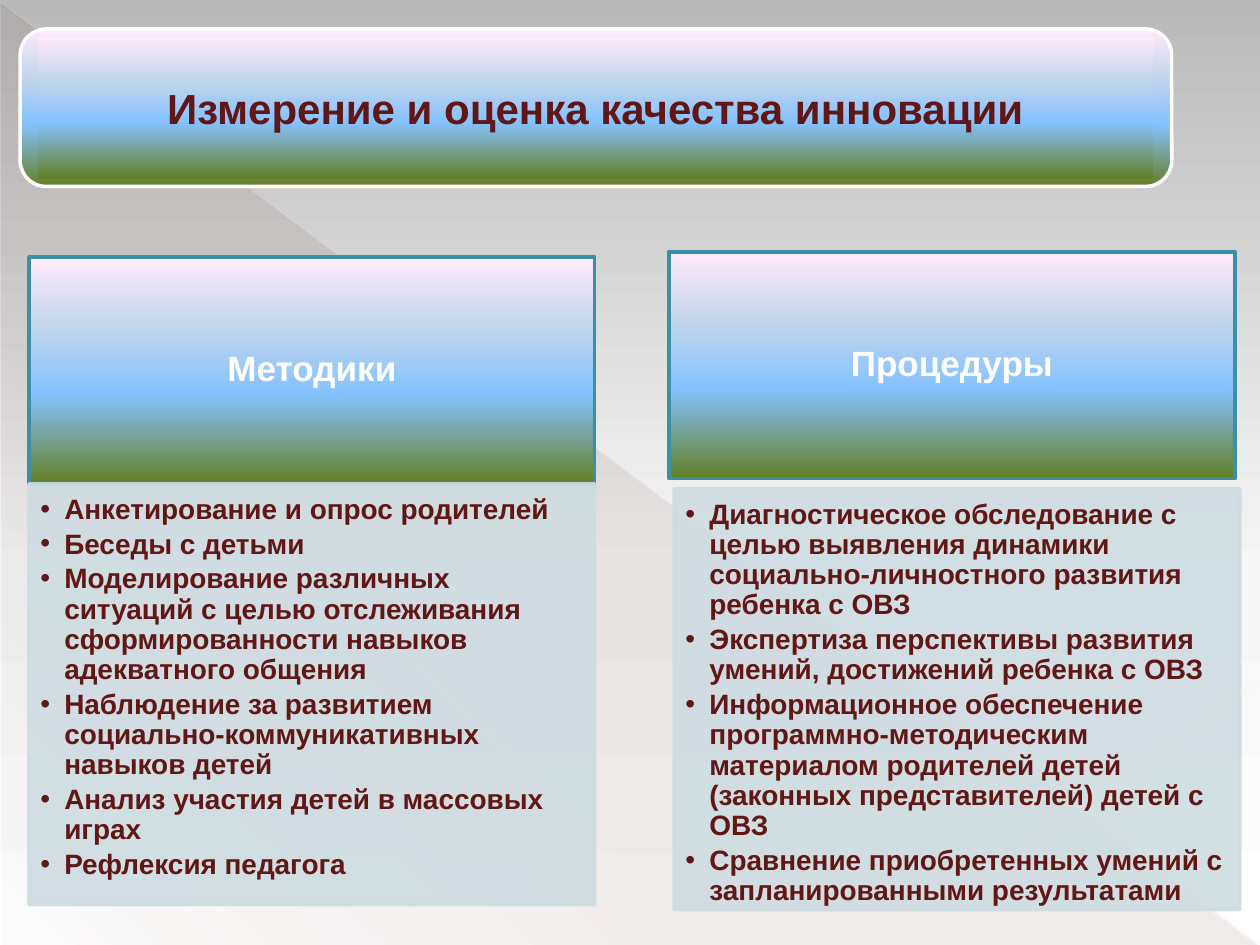
from lxml import etree
from pptx import Presentation
from pptx.dml.color import RGBColor
from pptx.enum.shapes import MSO_CONNECTOR, MSO_SHAPE
from pptx.enum.text import MSO_ANCHOR, PP_ALIGN
from pptx.oxml.ns import qn
from pptx.util import Inches, Pt

TITLE = "Измерение и оценка качества инновации"
COLUMNS = [
    {
        "heading": "Методики",
        "heading_at": (0.23, 2.04),
        "body_at": (0.23, 3.84),
        "items": [
            "Анкетирование и опрос родителей",
            "Беседы с детьми",
            "Моделирование различных ситуаций с целью отслеживания "
            "сформированности навыков адекватного общения",
            "Наблюдение за развитием социально-коммуникативных навыков детей",
            "Анализ участия детей в массовых играх",
            "Рефлексия педагога",
        ],
    },
    {
        "heading": "Процедуры",
        "heading_at": (5.31, 2),
        "body_at": (5.35, 3.88),
        "items": [
            "Диагностическое обследование с целью выявления динамики "
            "социально-личностного развития ребенка с ОВЗ",
            "Экспертиза перспективы развития умений, достижений ребенка с ОВЗ",
            "Информационное обеспечение программно-методическим материалом "
            "родителей детей (законных представителей) детей с ОВЗ",
            "Сравнение приобретенных умений с запланированными результатами",
        ],
    },
]
DIAGONALS = [
    ((0, 0.01), (9.99, 7.49), "FAF0DC", 0.39, 35),
    ((10, 5.41), (7.07, 7.49), "FAF2DF", 0.47, 45),
]
BACKDROP = [(0, "B9B9B9", 100), (60, "F6F6F6", 100), (100, "FFFFFF", 100)]
SHADE = [(0, "4F271C", 10), (70, "4F271C", 8), (100, "4F271C", 1)]
MEADOW = [(0, "638026", 100), (40, "85C2FF", 100),
          (70, "C4D6EB", 100), (100, "FFEBFA", 100)]
COLUMN_WIDTH, HEADING_HEIGHT, BODY_HEIGHT = 4.49, 1.8, 3.34
FONT, DARK, WHITE, TEAL, PALE = "Arial", "621717", "FFFFFF", "3891A7", "CEDCE1"


def rgb(value):
    return RGBColor.from_string(value)


def set_opacity(color_element, percent):
    etree.SubElement(color_element, qn("a:alpha")).set("val", str(percent * 1000))


def set_gradient(owner, fill, stops, angle):
    fill.gradient()
    gradient = owner.element.xpath(".//a:gradFill")[0]
    for child in list(gradient):
        gradient.remove(child)
    stop_list = etree.SubElement(gradient, qn("a:gsLst"))
    for position, value, opacity in stops:
        stop = etree.SubElement(stop_list, qn("a:gs"))
        stop.set("pos", str(position * 1000))
        color = etree.SubElement(stop, qn("a:srgbClr"))
        color.set("val", value)
        if opacity < 100:
            set_opacity(color, opacity)
    linear = etree.SubElement(gradient, qn("a:lin"))
    linear.set("ang", str(angle * 60000))
    linear.set("scaled", "0")


def add_box(slide, kind, left, top, width, height, border=None):
    shape = slide.shapes.add_shape(
        kind, Inches(left), Inches(top), Inches(width), Inches(height))
    shape.shadow.inherit = False
    if border:
        shape.line.color.rgb = rgb(border)
        shape.line.width = Pt(2)
    else:
        shape.line.fill.background()
    return shape


def add_diagonal(slide, start, end, color, width, opacity):
    line = slide.shapes.add_connector(
        MSO_CONNECTOR.STRAIGHT, *(Inches(value) for value in start + end))
    line.line.color.rgb = rgb(color)
    line.line.width = Pt(width)
    set_opacity(line.element.xpath(".//a:ln//a:srgbClr")[0], opacity)
    etree.SubElement(line.element.spPr, qn("a:effectLst"))


def set_frame(shape, anchor, margins):
    frame = shape.text_frame
    frame.word_wrap = True
    frame.vertical_anchor = anchor
    (frame.margin_left, frame.margin_top,
     frame.margin_right, frame.margin_bottom) = (Inches(m) for m in margins)
    return frame


def write(paragraph, text, size, color, align):
    paragraph.alignment = align
    run = paragraph.add_run()
    run.text = text
    run.font.name = FONT
    run.font.size = Pt(size)
    run.font.bold = True
    run.font.color.rgb = rgb(color)


def add_bullet(paragraph):
    properties = paragraph._p.get_or_add_pPr()
    indent = Inches(0.19)
    properties.set("marL", str(indent))
    properties.set("indent", str(-indent))
    etree.SubElement(properties, qn("a:buFont")).set("typeface", FONT)
    etree.SubElement(properties, qn("a:buChar")).set("char", "•")


def add_column(slide, column):
    heading = add_box(slide, MSO_SHAPE.RECTANGLE, *column["heading_at"],
                      COLUMN_WIDTH, HEADING_HEIGHT, TEAL)
    set_gradient(heading, heading.fill, MEADOW, 270)
    frame = set_frame(heading, MSO_ANCHOR.MIDDLE, (0.1, 0.05, 0.1, 0.05))
    write(frame.paragraphs[0], column["heading"], 20, WHITE, PP_ALIGN.CENTER)
    frame.paragraphs[0].line_spacing = 0.9

    body = add_box(slide, MSO_SHAPE.RECTANGLE, *column["body_at"],
                   COLUMN_WIDTH, BODY_HEIGHT, PALE)
    body.fill.solid()
    body.fill.fore_color.rgb = rgb(PALE)
    for color in body.element.spPr.xpath(".//a:srgbClr"):
        set_opacity(color, 90)
    frame = set_frame(body, MSO_ANCHOR.TOP, (0.09, 0.09, 0.12, 0.14))
    for index, item in enumerate(column["items"]):
        paragraph = frame.add_paragraph() if index else frame.paragraphs[0]
        write(paragraph, item, 16, DARK, PP_ALIGN.LEFT)
        paragraph.line_spacing = 0.9
        paragraph.space_after = Pt(2.6)
        add_bullet(paragraph)


def add_title(slide):
    banner = add_box(slide, MSO_SHAPE.ROUNDED_RECTANGLE, 0.16, 0.23, 9.14, 1.25, WHITE)
    panel = add_box(slide, MSO_SHAPE.RECTANGLE, 0.3, 0.29, 8.85, 1.13)
    for shape in (banner, panel):
        set_gradient(shape, shape.fill, MEADOW, 270)
    frame = set_frame(panel, MSO_ANCHOR.MIDDLE, (0.25, 0, 0.25, 0))
    write(frame.paragraphs[0], TITLE, 24, DARK, PP_ALIGN.CENTER)


def main():
    presentation = Presentation()
    presentation.slide_width = Inches(10)
    presentation.slide_height = Inches(7.5)
    slide = presentation.slides.add_slide(presentation.slide_layouts[6])
    set_gradient(slide, slide.background.fill, BACKDROP, 90)
    triangle = add_box(slide, MSO_SHAPE.RIGHT_TRIANGLE, 0.01, 0.02, 9.98, 7.48)
    set_gradient(triangle, triangle.fill, SHADE, 133)
    for diagonal in DIAGONALS:
        add_diagonal(slide, *diagonal)
    for column in COLUMNS:
        add_column(slide, column)
    add_title(slide)
    presentation.save("out.pptx")


if __name__ == "__main__":
    main()
